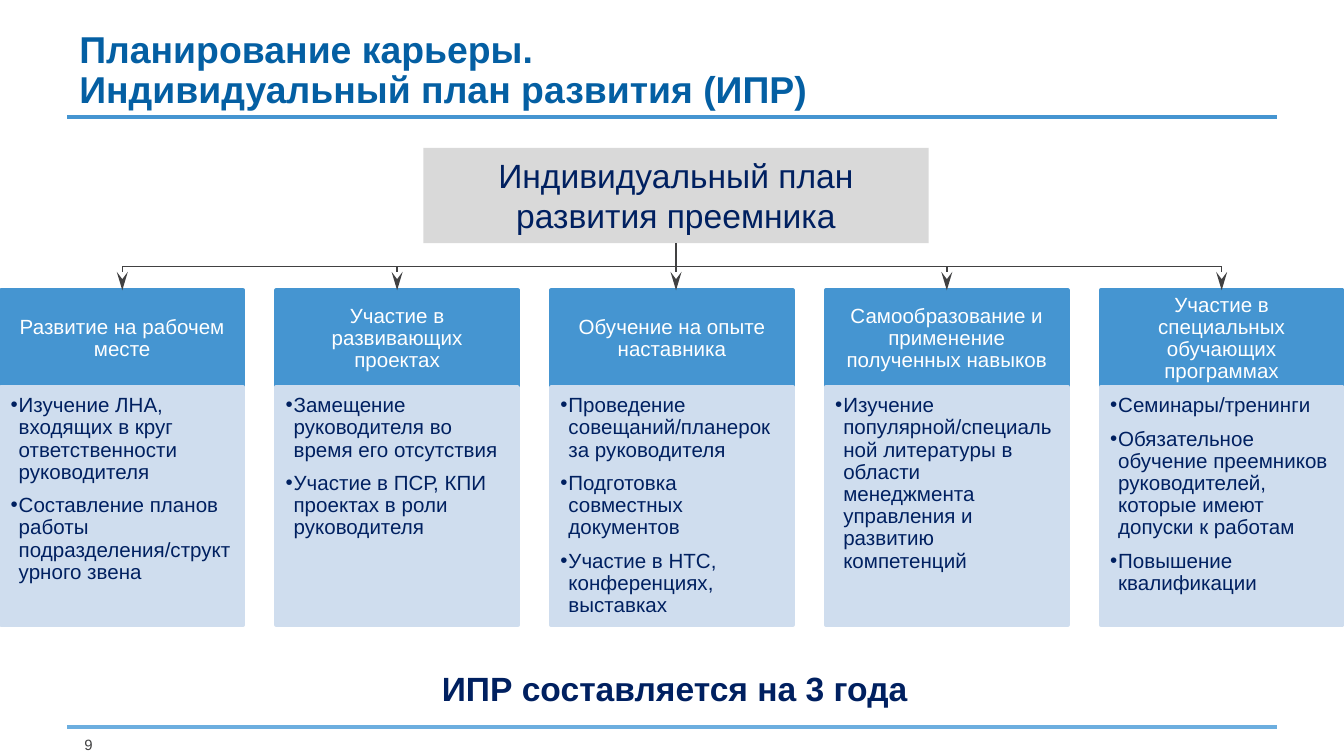
from dataclasses import dataclass

from lxml.etree import SubElement
from pptx import Presentation
from pptx.dml.color import RGBColor
from pptx.enum.shapes import MSO_CONNECTOR, MSO_SHAPE
from pptx.enum.text import MSO_ANCHOR, MSO_AUTO_SIZE, PP_ALIGN
from pptx.oxml.ns import qn
from pptx.util import Inches, Pt


@dataclass(frozen=True)
class Theme:
    font: str = "Arial"
    title: str = "045FA3"
    navy: str = "002060"
    white: str = "FFFFFF"
    accent: str = "4595D1"
    footer_rule: str = "6CAEDF"
    card: str = "CFDDEE"
    plan: str = "D9D9D9"
    grey: str = "414142"
    title_size: int = 20
    lead_size: int = 18
    card_size: int = 11
    number_size: int = 8


THEME = Theme()

DIRECTIONS = [
    ("Развитие на рабочем месте", [
        "Изучение ЛНА, входящих в круг ответственности руководителя",
        "Составление планов работы подразделения/структурного звена"]),
    ("Участие в развивающих проектах", [
        "Замещение руководителя во время его отсутствия",
        "Участие в ПСР, КПИ проектах в роли руководителя"]),
    ("Обучение на опыте наставника", [
        "Проведение совещаний/планерок за руководителя",
        "Подготовка совместных документов",
        "Участие в НТС, конференциях, выставках"]),
    ("Самообразование и применение полученных навыков", [
        "Изучение популярной/специальной литературы в области "
        "менеджмента управления и развитию компетенций"]),
    ("Участие в специальных обучающих программах", [
        "Семинары/тренинги",
        "Обязательное обучение преемников руководителей, "
        "которые имеют допуски к работам",
        "Повышение квалификации"]),
]


def rgb(color):
    return RGBColor.from_string(color)


def place(shape, left, top, width, height):
    shape.left, shape.top = Inches(left), Inches(top)
    shape.width, shape.height = Inches(width), Inches(height)


def set_frame(frame, anchor, insets=(0.1, 0.05, 0.1, 0.05), wrap=True):
    frame.auto_size = MSO_AUTO_SIZE.NONE
    frame.word_wrap = wrap
    frame.vertical_anchor = anchor
    (frame.margin_left, frame.margin_top,
     frame.margin_right, frame.margin_bottom) = map(Inches, insets)


def style_paragraph(paragraph, size, color, align=PP_ALIGN.LEFT, bold=False,
                    spacing=1.0):
    paragraph.alignment = align
    paragraph.line_spacing = spacing
    for run in paragraph.runs:
        run.font.name = THEME.font
        run.font.size = Pt(size)
        run.font.bold = bold
        run.font.color.rgb = rgb(color)


def add_panel(slide, box, fill, outlined=True):
    left, top, width, height = map(Inches, box)
    panel = slide.shapes.add_shape(MSO_SHAPE.RECTANGLE, left, top, width, height)
    panel.shadow.inherit = False
    panel.fill.solid()
    panel.fill.fore_color.rgb = rgb(fill)
    if outlined:
        panel.line.color.rgb = rgb(fill)
        panel.line.width = Pt(2)
    else:
        panel.line.fill.background()
    return panel


def add_line(slide, start, end, color, width, arrow=False):
    line = slide.shapes.add_connector(
        MSO_CONNECTOR.STRAIGHT, *map(Inches, (*start, *end)))
    line.line.color.rgb = rgb(color)
    line.line.width = Pt(width)
    properties = line._element.spPr
    if arrow:
        SubElement(properties.find(qn("a:ln")), qn("a:tailEnd"),
                   type="stealth", w="med", len="lg")
    SubElement(properties, qn("a:effectLst"))
    return line


def add_title(slide, box, text):
    title = slide.shapes.title
    place(title, *box)
    set_frame(title.text_frame, MSO_ANCHOR.BOTTOM, (0.09, 0.04, 0.09, 0.04))
    title.text_frame.text = text
    paragraph = title.text_frame.paragraphs[0]
    style_paragraph(paragraph, THEME.title_size, THEME.title, bold=True, spacing=0.9)
    for line_break in paragraph._p.findall(qn("a:br")):
        SubElement(line_break, qn("a:rPr"), sz=str(THEME.title_size * 100))


def add_label(slide, box, text, size, color, align, bold=False,
              insets=(0.1, 0.05, 0.1, 0.05), wrap=True):
    label = slide.shapes.add_textbox(*map(Inches, box))
    set_frame(label.text_frame, MSO_ANCHOR.TOP, insets, wrap)
    label.text_frame.text = text
    style_paragraph(label.text_frame.paragraphs[0], size, color, align, bold)


def add_plan(slide, box, text):
    plan = add_panel(slide, box, THEME.plan, outlined=False)
    set_frame(plan.text_frame, MSO_ANCHOR.TOP)
    plan.text_frame.text = text
    style_paragraph(plan.text_frame.paragraphs[0], THEME.lead_size, THEME.navy,
                    PP_ALIGN.CENTER)
    return plan


def add_direction(slide, box, heading, actions, header_height=0.72):
    """Add a heading over its list of actions and return the heading shape."""
    left, top, width, height = box
    header = add_panel(slide, (left, top, width, header_height), THEME.accent)
    set_frame(header.text_frame, MSO_ANCHOR.MIDDLE, (0.09, 0.05, 0.09, 0.05))
    header.text_frame.text = heading
    style_paragraph(header.text_frame.paragraphs[0], THEME.card_size, THEME.white,
                    PP_ALIGN.CENTER, spacing=0.9)

    card = add_panel(slide, (left, top + header_height, width, height - header_height),
                     THEME.card)
    set_frame(card.text_frame, MSO_ANCHOR.TOP, (0.07, 0.06, 0.09, 0.1))
    card.text_frame.text = "\n".join(actions)
    for action in card.text_frame.paragraphs:
        action.level = 1
        action.space_after = Pt(6)
        style_paragraph(action, THEME.card_size, THEME.navy, spacing=0.9)
        properties = action._p.get_or_add_pPr()
        properties.set("marL", str(Inches(0.06)))
        properties.set("indent", str(-Inches(0.06)))
        SubElement(properties, qn("a:buFont"), typeface=THEME.font)
        SubElement(properties, qn("a:buChar"), char="•")
    return header


def add_tree(slide, box, plan, headers):
    """Link the plan to every heading; the box spans plan bottom to heading tops."""
    left, top, width, height = box
    trunk_x = (plan.left + plan.width / 2) / Inches(1)
    branch_y, bottom = top + height / 2, top + height
    trunk = add_line(slide, (trunk_x, top), (trunk_x, bottom), THEME.grey, 0.75, True)
    trunk.begin_connect(plan, 2)
    for end_x in (left, left + width):
        add_line(slide, (trunk_x, branch_y), (end_x, branch_y), THEME.grey, 0.75)
    middle = len(headers) // 2
    for index, header in enumerate(headers):
        if index != middle:
            x = left + width * index / (len(headers) - 1)
            drop = add_line(slide, (x, branch_y), (x, bottom), THEME.grey, 0.75, True)
            drop.end_connect(header, 0)


def build_slide(presentation):
    slide = presentation.slides.add_slide(presentation.slide_layouts[5])
    for y, color in ((5.41, THEME.footer_rule), (0.87, THEME.accent)):
        add_line(slide, (0.5, y), (9.5, y), color, 2.25)
    add_label(slide, (0.5, 5.47, 0.19, 0.11), "9", THEME.number_size, THEME.grey,
              PP_ALIGN.RIGHT, insets=(0, 0, 0, 0), wrap=False)
    add_title(slide, (0.5, 0.23, 7.55, 0.64),
              "Планирование карьеры.\vИндивидуальный план развития (ИПР)")

    left, top, width, height = 0.01, 2.16, 9.98, 2.49
    column = 1.8
    pitch = (width - column) / (len(DIRECTIONS) - 1)
    headers = [
        add_direction(slide, (left + index * pitch, top, column, height), *direction)
        for index, direction in enumerate(DIRECTIONS)]

    add_label(slide, (0.42, 4.92, 9.2, 0.4), "ИПР составляется на 3 года",
              THEME.lead_size, THEME.navy, PP_ALIGN.CENTER, bold=True)
    plan = add_plan(slide, (3.15, 1.1, 3.76, 0.71),
                    "Индивидуальный план развития преемника")
    add_tree(slide, (left + column / 2, 1.81, width - column, top - 1.81), plan, headers)


def main():
    presentation = Presentation()
    presentation.slide_width, presentation.slide_height = Pt(720), Pt(405)
    build_slide(presentation)
    presentation.save("out.pptx")


if __name__ == "__main__":
    main()
